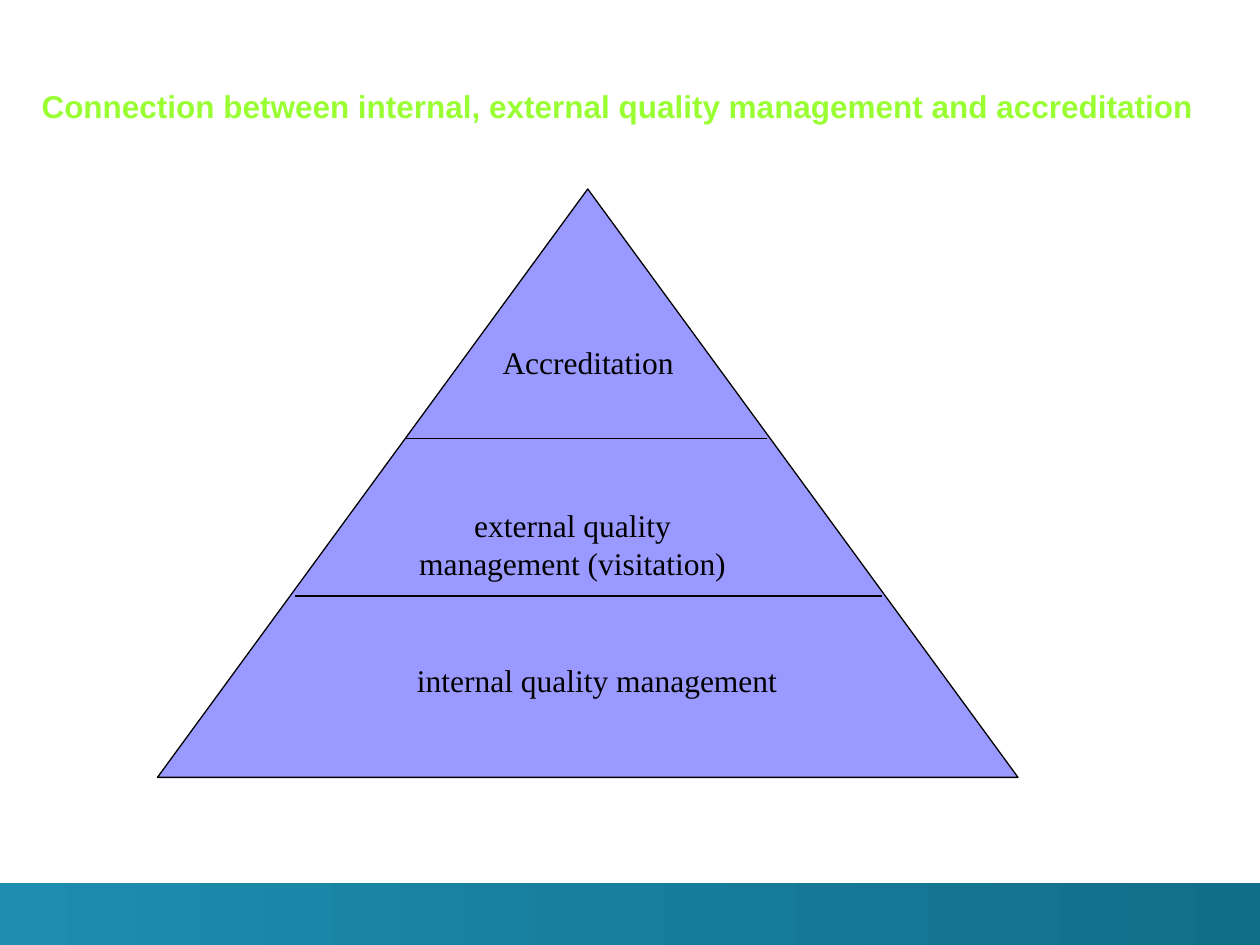
from lxml.etree import SubElement
from pptx import Presentation
from pptx.dml.color import RGBColor
from pptx.enum.shapes import MSO_CONNECTOR, MSO_SHAPE
from pptx.enum.text import MSO_ANCHOR, PP_ALIGN
from pptx.oxml.ns import qn
from pptx.util import Inches, Pt

COLORS = {
    "title": "99FF33",
    "pyramid": "9999FF",
    "ink": "000000",
    "band_left": "1D8DB0",
    "band_right": "116E8A",
}
COLUMNS, ROWS = 100, 75
WIDTH, HEIGHT = Inches(10), Inches(7.5)


def color(name):
    return RGBColor.from_string(COLORS[name])


def x(columns):
    return round(WIDTH * columns / COLUMNS)


def y(rows):
    return round(HEIGHT * rows / ROWS)


def box(left, top, width, height):
    return x(left), y(top), x(width), y(height)


def add_band(s, *area):
    sp = s.shapes.add_shape(MSO_SHAPE.RECTANGLE, *box(*area))
    sp.shadow.inherit = False
    sp.line.fill.background()
    sp.fill.gradient()
    sp.fill.gradient_angle = 0
    for stop, name in zip(sp.fill.gradient_stops, ("band_left", "band_right")):
        stop.color.rgb = color(name)


def add_triangle(s, *area):
    sp = s.shapes.add_shape(MSO_SHAPE.ISOSCELES_TRIANGLE, *box(*area))
    sp.shadow.inherit = False
    sp.fill.solid()
    sp.fill.fore_color.rgb = color("pyramid")
    sp.line.color.rgb = color("ink")
    sp.line.width = Pt(0.75)


def add_divider(s, left, right, row):
    line = s.shapes.add_connector(
        MSO_CONNECTOR.STRAIGHT, x(left), y(row), x(right), y(row))
    line.line.color.rgb = color("ink")
    line.line.width = Pt(0.75)
    SubElement(line._element.spPr, qn("a:effectLst"))


def add_text(s, text, area, font="Times New Roman", ink="ink", bold=False,
             align=PP_ALIGN.CENTER):
    sp = s.shapes.add_textbox(*box(*area))
    tf = sp.text_frame
    tf.word_wrap = True
    tf.text = text
    p = tf.paragraphs[0]
    p.alignment = align
    r = p.runs[0]
    r.font.name = font
    r.font.size = Pt(18)
    r.font.bold = bold
    r.font.color.rgb = color(ink)
    return tf


def add_title(s, text, area):
    tf = add_text(s, text, area, "Arial", "title", True, PP_ALIGN.LEFT)
    tf.vertical_anchor = MSO_ANCHOR.BOTTOM
    tf.margin_left = tf.margin_right = tf.margin_top = tf.margin_bottom = 0


def main():
    prs = Presentation()
    prs.slide_width, prs.slide_height = WIDTH, HEIGHT
    s = prs.slides.add_slide(prs.slide_layouts[6])
    add_band(s, 0, 70.1, 100, 5.3)
    add_title(
        s,
        "Connection between internal, external quality management and accreditation",
        (3.3, 2.5, 94.2, 7.4))
    add_triangle(s, 12.5, 15, 68.3, 46.7)
    add_divider(s, 23.4, 70, 47.3)
    add_divider(s, 32.2, 60.9, 34.8)
    add_text(s, "internal quality management", (31.1, 52, 32.6, 7.7))
    add_text(s, "external quality management (visitation)", (31.1, 39.7, 28.7, 7))
    add_text(s, "Accreditation", (38.9, 26.7, 16.3, 4), align=PP_ALIGN.LEFT)
    prs.save("out.pptx")


if __name__ == "__main__":
    main()
